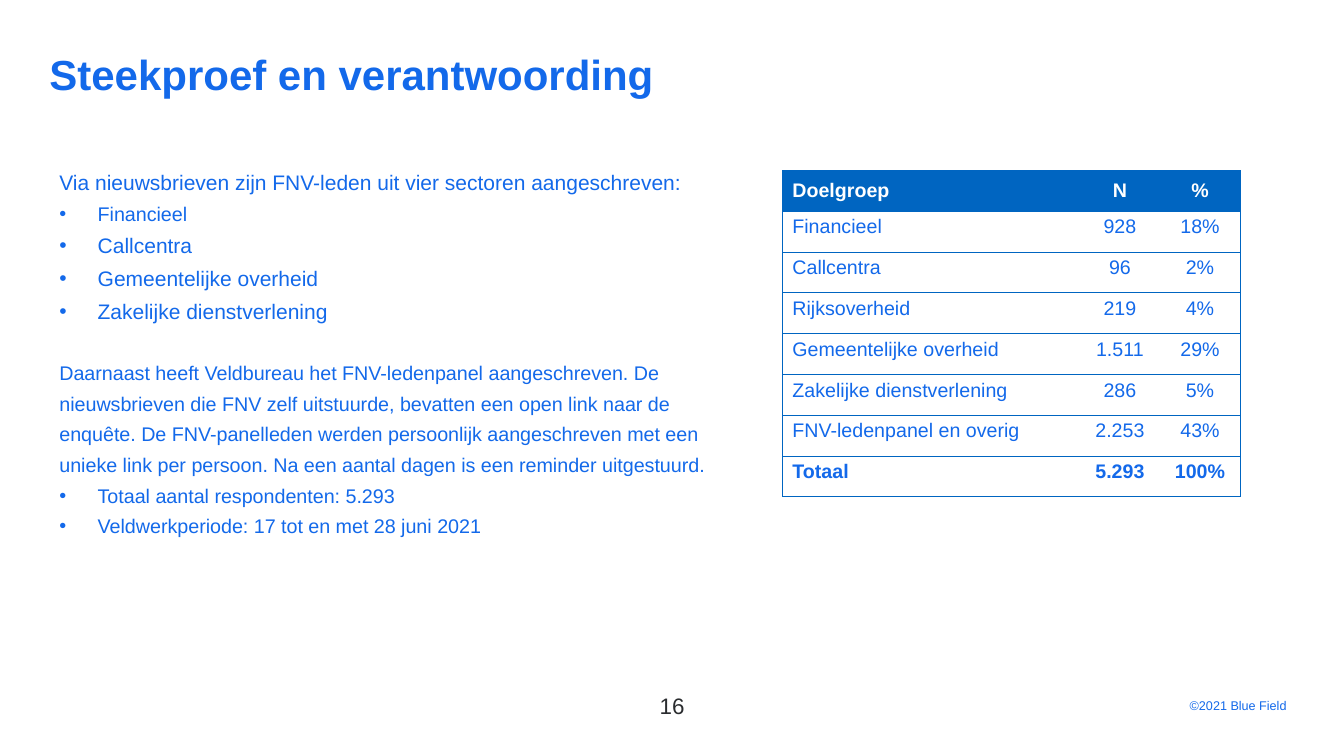
from dataclasses import dataclass

from lxml.etree import SubElement
from pptx import Presentation
from pptx.dml.color import RGBColor
from pptx.enum.text import MSO_ANCHOR, PP_ALIGN
from pptx.oxml.ns import qn
from pptx.slide import Slide
from pptx.table import _Cell
from pptx.text.text import TextFrame, _Paragraph
from pptx.util import Emu, Inches, Pt

COLOURS = {"text": "1369EA", "table": "0065C1", "header": "FFFFFF", "number": "2A2C2F"}
FONT = "Arial"
SLIDE_WIDTH, SLIDE_HEIGHT = Inches(13.33), Inches(7.5)
INDENT = Inches(0.38)
BORDER = Pt(0.5)


@dataclass(frozen=True)
class Area:
    """Place on the slide, in percent of its width and height."""
    left: float
    top: float
    width: float
    height: float

    def emu(self) -> tuple[Emu, Emu, Emu, Emu]:
        return (Emu(int(SLIDE_WIDTH * self.left / 100)),
                Emu(int(SLIDE_HEIGHT * self.top / 100)),
                Emu(int(SLIDE_WIDTH * self.width / 100)),
                Emu(int(SLIDE_HEIGHT * self.height / 100)))


@dataclass(frozen=True)
class Line:
    text: str
    size: float
    colour: str = "text"
    bold: bool = False
    bullet: bool = False
    spacing: float = 1.0
    before: float = 0
    align: PP_ALIGN = PP_ALIGN.LEFT


@dataclass(frozen=True)
class Block:
    area: Area
    lines: tuple[Line, ...]
    inset_x: float = 0.04
    inset_y: float = 0.04
    anchor: MSO_ANCHOR = MSO_ANCHOR.TOP


@dataclass(frozen=True)
class Sample:
    group: str
    count: str
    share: str


BLOCKS = (
    # Footer
    Block(Area(88.22, 91.33, 8.5, 3.4),
          (Line("©2021 Blue Field", 9, spacing=1.2),)),
    Block(Area(48.09, 91.07, 3.83, 4.53),
          (Line("16", 16, "number", align=PP_ALIGN.CENTER),), anchor=MSO_ANCHOR.MIDDLE),
    # Title
    Block(Area(3.68, 6.4, 80.72, 9.87),
          (Line("Steekproef en verantwoording", 30, bold=True),), 0, 0),
    # Explanation
    Block(Area(3.68, 20.75, 50.94, 63.47), (
        Line("Via nieuwsbrieven zijn FNV-leden uit vier sectoren aangeschreven:", 15, spacing=1.3),
        Line("Financieel", 14.1, bullet=True, spacing=1.3),
        Line("Callcentra", 15, bullet=True, spacing=1.3),
        Line("Gemeentelijke overheid", 15, bullet=True, spacing=1.3),
        Line("Zakelijke dienstverlening", 15, bullet=True, spacing=1.3),
        Line("Daarnaast heeft Veldbureau het FNV-ledenpanel aangeschreven. De nieuwsbrieven "
             "die FNV zelf uitstuurde, bevatten een open link naar de enquête. De "
             "FNV-panelleden werden persoonlijk aangeschreven met een unieke link per persoon. "
             "Na een aantal dagen is een reminder uitgestuurd.", 14.1, spacing=1.3, before=21.5),
        Line("Totaal aantal respondenten: 5.293", 14.1, bullet=True, spacing=1.3),
        Line("Veldwerkperiode: 17 tot en met 28 juni 2021", 14.1, bullet=True, spacing=1.3),
    ), 0.1, 0.05),
)

TABLE_AREA = Area(58.21, 22.53, 34.06, 43.2)
COLUMN_SHARES = (0.65, 0.175, 0.175)
SAMPLES = (
    Sample("Doelgroep", "N", "%"),
    Sample("Financieel", "928", "18%"),
    Sample("Callcentra", "96", "2%"),
    Sample("Rijksoverheid", "219", "4%"),
    Sample("Gemeentelijke overheid", "1.511", "29%"),
    Sample("Zakelijke dienstverlening", "286", "5%"),
    Sample("FNV-ledenpanel en overig", "2.253", "43%"),
    Sample("Totaal", "5.293", "100%"),
)


def add_bullet(paragraph: _Paragraph) -> None:
    properties = paragraph._p.get_or_add_pPr()
    properties.set("marL", str(INDENT))
    properties.set("indent", str(-INDENT))
    SubElement(properties, qn("a:buFont"), typeface=FONT)
    SubElement(properties, qn("a:buChar"), char="•")


def write_line(paragraph: _Paragraph, line: Line) -> None:
    paragraph.text = line.text
    if line.bullet:
        add_bullet(paragraph)
    paragraph.alignment = line.align
    paragraph.line_spacing = line.spacing
    if line.before:
        paragraph.space_before = Pt(line.before)
    for run in paragraph.runs:
        run.font.name = FONT
        run.font.size = Pt(line.size)
        run.font.bold = line.bold
        run.font.color.rgb = RGBColor.from_string(COLOURS[line.colour])


def write_lines(frame: TextFrame, lines: tuple[Line, ...]) -> None:
    for index, line in enumerate(lines):
        write_line(frame.add_paragraph() if index else frame.paragraphs[0], line)


def draw_block(slide: Slide, block: Block) -> None:
    frame = slide.shapes.add_textbox(*block.area.emu()).text_frame
    frame.word_wrap = True
    frame.vertical_anchor = block.anchor
    frame.margin_left = frame.margin_right = Inches(block.inset_x)
    frame.margin_top = frame.margin_bottom = Inches(block.inset_y)
    write_lines(frame, block.lines)


def set_borders(cell: _Cell, visible: dict[str, bool]) -> None:
    properties = cell._tc.get_or_add_tcPr()
    for side, shown in visible.items():
        edge = SubElement(properties, qn(f"a:{side}"), w=str(BORDER))
        if shown:
            fill = SubElement(edge, qn("a:solidFill"))
            SubElement(fill, qn("a:srgbClr"), val=COLOURS["table"])
        else:
            SubElement(edge, qn("a:noFill"))


def draw_sample_table(slide: Slide) -> None:
    left, top, width, height = TABLE_AREA.emu()
    last_column, last_row = len(COLUMN_SHARES) - 1, len(SAMPLES) - 1
    table = slide.shapes.add_table(
        len(SAMPLES), len(COLUMN_SHARES), left, top, width, height).table
    table.horz_banding = False
    for column, share in zip(table.columns, COLUMN_SHARES):
        column.width = Emu(int(width * share))
    for row_index, sample in enumerate(SAMPLES):
        is_header = row_index == 0
        for column_index, text in enumerate((sample.group, sample.count, sample.share)):
            cell = table.cell(row_index, column_index)
            set_borders(cell, {"lnL": column_index == 0, "lnR": column_index == last_column,
                               "lnT": True, "lnB": True})
            if is_header:
                cell.fill.solid()
                cell.fill.fore_color.rgb = RGBColor.from_string(COLOURS["table"])
            else:
                cell.fill.background()
            cell.vertical_anchor = MSO_ANCHOR.MIDDLE if is_header else MSO_ANCHOR.TOP
            write_line(cell.text_frame.paragraphs[0], Line(
                text, 14, "header" if is_header else "text",
                bold=row_index in (0, last_row),
                align=PP_ALIGN.CENTER if column_index else PP_ALIGN.LEFT))


def main() -> None:
    presentation = Presentation()
    presentation.slide_width, presentation.slide_height = SLIDE_WIDTH, SLIDE_HEIGHT
    slide = presentation.slides.add_slide(presentation.slide_layouts[6])
    for block in BLOCKS:
        draw_block(slide, block)
    draw_sample_table(slide)
    presentation.save("out.pptx")


if __name__ == "__main__":
    main()
